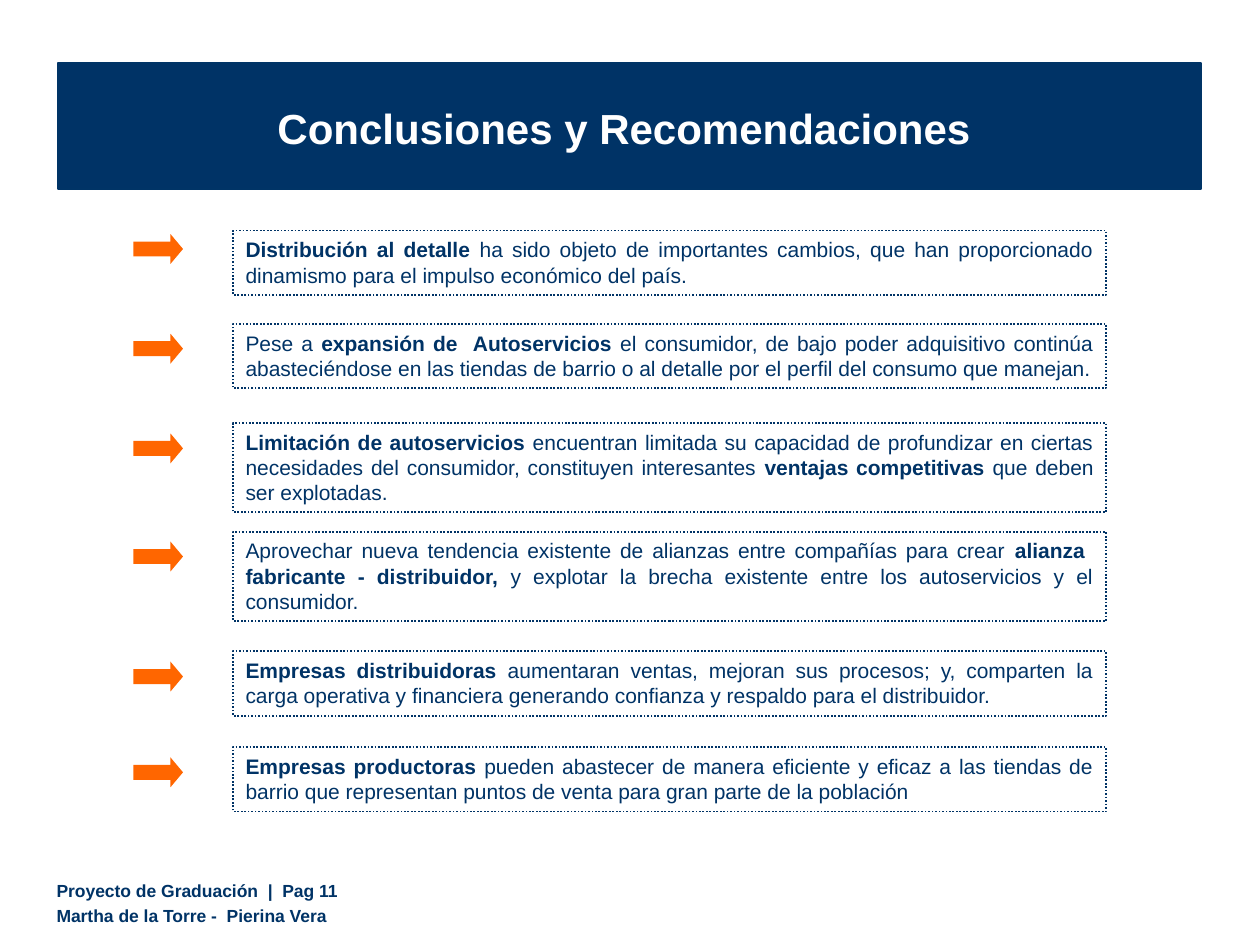
from pptx import Presentation
from pptx.dml.color import RGBColor
from pptx.enum.dml import MSO_LINE
from pptx.enum.shapes import MSO_SHAPE
from pptx.enum.text import MSO_ANCHOR, MSO_AUTO_SIZE, PP_ALIGN
from pptx.util import Cm, Pt

RECTANGLE = MSO_SHAPE.RECTANGLE
RIGHT_ARROW = MSO_SHAPE.RIGHT_ARROW
DOTTED = MSO_LINE.ROUND_DOT
TOP, BOTTOM = MSO_ANCHOR.TOP, MSO_ANCHOR.BOTTOM
LEFT, CENTER, JUSTIFY = PP_ALIGN.LEFT, PP_ALIGN.CENTER, PP_ALIGN.JUSTIFY
GROW = MSO_AUTO_SIZE.SHAPE_TO_FIT_TEXT

COLORS = {"navy": "003366", "border": "003466", "orange": "FF6600", "white": "FFFFFF"}
FONT = "Arial"
TITLE_ONLY = 5

CONCLUSIONS = [
    (4.65, 1.3, 4.72, [
        ("Distribución al detalle", True),
        (" ha sido objeto de importantes cambios, que han proporcionado "
         "dinamismo para el impulso económico del país.", False)]),
    (6.53, 1.3, 6.73, [
        ("Pese a ", False),
        ("expansión de  Autoservicios", True),
        (" el consumidor, de bajo poder adquisitivo continúa abasteciéndose en las "
         "tiendas de barrio o al detalle por el perfil del consumo que manejan.", False)]),
    (8.53, 1.8, 8.74, [
        ("Limitación de autoservicios", True),
        (" encuentran limitada su capacidad de profundizar en ciertas necesidades "
         "del consumidor, constituyen interesantes ", False),
        ("ventajas competitivas", True),
        (" que deben ser explotadas.", False)]),
    (10.72, 1.8, 10.92, [
        ("Aprovechar nueva tendencia existente de alianzas entre compañías "
         "para crear ", False),
        ("alianza  fabricante - distribuidor,", True),
        (" y explotar la brecha existente entre los autoservicios "
         "y el consumidor.", False)]),
    (13.13, 1.3, 13.34, [
        ("Empresas distribuidoras", True),
        (" aumentaran ventas, mejoran sus procesos; y, comparten la carga operativa "
         "y financiera generando confianza y respaldo para el distribuidor.", False)]),
    (15.06, 1.3, 15.27, [
        ("Empresas productoras", True),
        (" pueden abastecer de manera eficiente y eficaz a las tiendas de barrio "
         "que representan puntos de venta para gran parte de la población", False)]),
]
FOOTER_LINES = ["Proyecto de Graduación  |  Pag 11", "Martha de la Torre -  Pierina Vera"]


def add_runs(paragraph, runs, size, color, alignment):
    paragraph.alignment = alignment
    for text, bold in runs:
        run = paragraph.add_run()
        run.text = text
        run.font.name = FONT
        run.font.size = Pt(size)
        run.font.bold = bold
        run.font.color.rgb = RGBColor.from_string(COLORS[color])


def add_plain_shape(preset, left, top, width, height, fill=None):
    shape = slide.shapes.add_shape(preset, Cm(left), Cm(top), Cm(width), Cm(height))
    shape.shadow.inherit = False
    if fill:
        shape.fill.solid()
        shape.fill.fore_color.rgb = RGBColor.from_string(COLORS[fill])
    else:
        shape.fill.background()
    return shape


presentation = Presentation()
presentation.slide_width = Cm(25.4)
presentation.slide_height = Cm(19.05)
slide = presentation.slides.add_slide(presentation.slide_layouts[TITLE_ONLY])

footer = slide.shapes.add_textbox(Cm(1.14), Cm(17.75), Cm(15.42), Cm(0.91))
frame = footer.text_frame
frame.word_wrap = True
frame.auto_size = GROW
frame.margin_left = frame.margin_right = frame.margin_top = frame.margin_bottom = 0
for index, line in enumerate(FOOTER_LINES):
    paragraph = frame.add_paragraph() if index else frame.paragraphs[0]
    paragraph.space_before = Pt(2)
    add_runs(paragraph, [(line, True)], 10, "navy", LEFT)

band = add_plain_shape(RECTANGLE, 1.17, 1.27, 23.04, 2.54, "navy")
band.line.color.rgb = RGBColor.from_string(COLORS["border"])
band.line.width = Pt(0.75)

title = slide.shapes.title
title.left, title.top, title.width, title.height = Cm(1.19), Cm(1.93), Cm(22.78), Cm(1.27)
title.text_frame.vertical_anchor = BOTTOM
title.text_frame.auto_size = GROW
add_runs(title.text_frame.paragraphs[0], [("Conclusiones y Recomendaciones", True)],
         24, "white", CENTER)
slide.shapes.element.append(title.element)

for box_top, box_height, arrow_top, runs in CONCLUSIONS:
    box = add_plain_shape(RECTANGLE, 4.7, box_top, 17.6, box_height)
    box.line.color.rgb = RGBColor.from_string(COLORS["navy"])
    box.line.width = Pt(1)
    box.line.dash_style = DOTTED
    box.text_frame.word_wrap = True
    box.text_frame.vertical_anchor = TOP
    box.text_frame.auto_size = GROW
    add_runs(box.text_frame.paragraphs[0], runs, 12, "navy", JUSTIFY)

    arrow = add_plain_shape(RIGHT_ARROW, 2.69, arrow_top, 1.0, 0.6, "orange")
    arrow.line.fill.background()
    arrow.adjustments[0] = 0.5
    arrow.adjustments[1] = 0.42

presentation.save("out.pptx")
